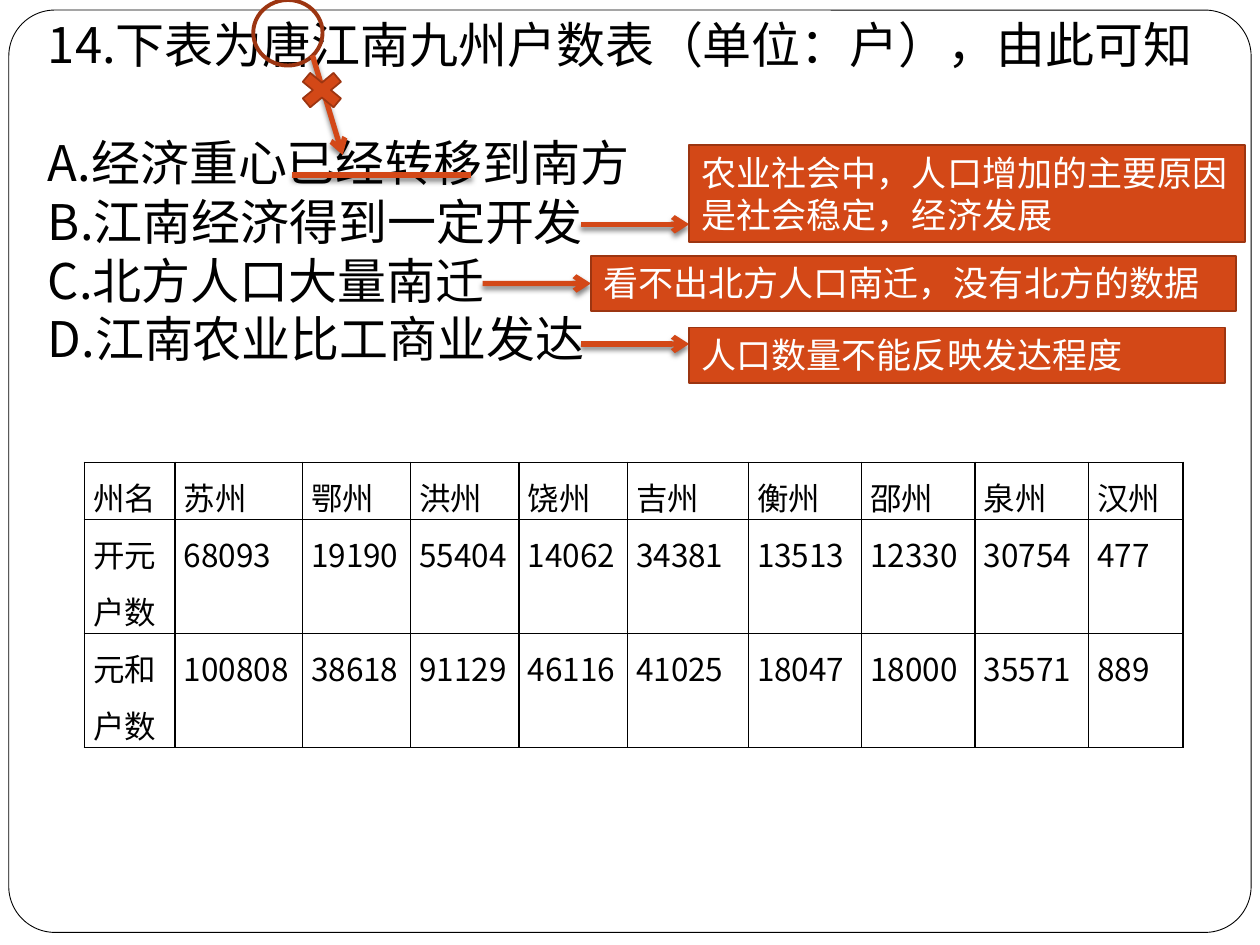
from lxml import etree
from pptx import Presentation, util as u
from pptx.dml.color import RGBColor
from pptx.enum import shapes, text
from pptx.oxml import ns, parse_xml

SANS, SERIF = "Noto Sans CJK SC", "Times New Roman"
BLACK, WHITE, ORANGE, RUST = "000000", "FFFFFF", "D34817", "9C3511"
LINE_PITCH = 1.2

question = "14.下表为唐江南九州户数表（单位：户），由此可知"
options = ["A.经济重心已经转移到南方", "B.江南经济得到一定开发",
           "C.北方人口大量南迁", "D.江南农业比工商业发达"]
callouts = [
    ("农业社会中，人口增加的主要原因是社会稳定，经济发展", (5.47, 1.15, 4.41, 0.77), 1.78),
    ("看不出北方人口南迁，没有北方的数据", (4.69, 2.03, 5.12, 0.44), 2.25),
    ("人口数量不能反映发达程度", (5.47, 2.6, 4.25, 0.44), 2.73),
]
households = [
    ["州名", "苏州", "鄂州", "洪州", "饶州", "吉州", "衡州", "邵州", "泉州", "汉州"],
    ["开元\n户数", "68093", "19190", "55404", "14062", "34381", "13513", "12330", "30754", "477"],
    ["元和\n户数", "100808", "38618", "91129", "46116", "41025", "18047", "18000", "35571", "889"],
]
column_widths = [0.72, 1.01, 0.86, 0.86, 0.86, 0.96, 0.9, 0.9, 0.9, 0.75]
row_heights = [0.45, 0.9, 0.9]


def color(value):
    return RGBColor.from_string(value)


def inches(values):
    return [u.Inches(v) for v in values]


def child(parent, tag, **attributes):
    return etree.SubElement(parent, ns.qn(tag), attributes)


def format_text(frame, size, ink, font=SANS, align=text.PP_ALIGN.LEFT, spacing=None):
    for paragraph in frame.paragraphs:
        paragraph.alignment = align
        paragraph.space_before = paragraph.space_after = u.Pt(0)
        paragraph.line_spacing = spacing or u.Pt(size * LINE_PITCH)
        for run in paragraph.runs:
            run.font.size = u.Pt(size)
            run.font.bold = False
            run.font.name = font
            run.font.color.rgb = color(ink)
            child(run._r.get_or_add_rPr(), "a:ea", typeface=SANS)


def fill_placeholder(placeholder, lines, top, height):
    placeholder.left, placeholder.top, placeholder.width, placeholder.height = inches(
        (0.28, top, 9.72, height))
    frame = placeholder.text_frame
    frame.text = "\n".join(lines)
    frame.word_wrap = True
    frame.auto_size = text.MSO_AUTO_SIZE.NONE
    frame.vertical_anchor = text.MSO_ANCHOR.MIDDLE
    frame.margin_top = frame.margin_bottom = 0
    format_text(frame, 28, BLACK)
    for paragraph in frame.paragraphs:
        properties = paragraph._p.get_or_add_pPr()
        properties.set("marL", "0")
        properties.set("indent", "0")
        child(properties, "a:buNone")


def add_shape(slide, kind, box, fill, outline, weight):
    shape = slide.shapes.add_shape(kind, *inches(box))
    shape.shadow.inherit = False
    if fill:
        shape.fill.solid()
        shape.fill.fore_color.rgb = color(fill)
    else:
        shape.fill.background()
    shape.line.color.rgb = color(outline)
    shape.line.width = u.Pt(weight)
    return shape


def add_stroke(slide, start, end, arrow=True):
    stroke = slide.shapes.add_connector(shapes.MSO_CONNECTOR.STRAIGHT, *inches(start + end))
    stroke.line.color.rgb = color(ORANGE)
    stroke.line.width = u.Pt(3)
    if arrow:
        child(stroke.line._get_or_add_ln(), "a:tailEnd", type="arrow")
    effects = child(stroke._element.spPr, "a:effectLst")
    shadow = child(effects, "a:outerShdw", blurRad=str(u.Pt(3)), dist=str(u.Pt(2)),
                   dir="5400000", rotWithShape="0")
    child(child(shadow, "a:srgbClr", val=BLACK), "a:alpha", val="50000")
    return stroke


def add_borders(cell):
    properties = cell._tc.get_or_add_tcPr()
    for position, side in enumerate("LRTB"):
        properties.insert(position, parse_xml(
            f'<a:ln{side} {ns.nsdecls("a")} w="{u.Pt(1)}"><a:solidFill>'
            f'<a:srgbClr val="{BLACK}"/></a:solidFill></a:ln{side}>'))


def add_household_table(slide):
    table = slide.shapes.add_table(
        len(households), len(column_widths),
        *inches((0.67, 3.67, sum(column_widths), sum(row_heights)))).table
    table.first_row = table.horz_banding = False
    for column, width in zip(table.columns, column_widths):
        column.width = u.Inches(width)
    for r, (row, values) in enumerate(zip(table.rows, households)):
        row.height = u.Inches(row_heights[r])
        for c, (cell, value) in enumerate(zip(row.cells, values)):
            cell.text_frame.text = value
            cell.margin_left = cell.margin_right = u.Inches(0.07)
            cell.margin_top = cell.margin_bottom = 0
            cell.fill.background()
            add_borders(cell)
            format_text(cell.text_frame, 18, BLACK, SANS if r and c else SERIF,
                        text.PP_ALIGN.JUSTIFY, 1.25)


def main():
    deck = Presentation()
    deck.slide_width, deck.slide_height = inches((10, 7.5))
    slide = deck.slides.add_slide(deck.slide_layouts[1])
    kinds = shapes.MSO_SHAPE

    frame = add_shape(slide, kinds.ROUNDED_RECTANGLE, (0.07, 0.08, 9.86, 7.32), WHITE, BLACK, 0.5)
    frame.adjustments[0] = 0.05
    slide.shapes._spTree.insert(2, frame._element)

    fill_placeholder(slide.shapes.title, [question], 0.11, 0.47)
    fill_placeholder(slide.placeholders[1], options, 1.05, 1.87)
    add_household_table(slide)

    add_shape(slide, kinds.OVAL, (2.01, 0, 0.55, 0.52), None, RUST, 2.25)
    add_stroke(slide, (2.32, 1.39), (3.74, 1.39), arrow=False)
    add_stroke(slide, (2.48, 0.44), (2.72, 1.23))
    add_shape(slide, kinds.MATH_MULTIPLY, (2.32, 0.52, 0.47, 0.39), ORANGE, RUST, 1)

    for remark, box, arrow_y in callouts:
        left, top, _, height = box
        arrow = add_stroke(slide, (left - 0.86, arrow_y), (left, arrow_y))
        callout = add_shape(slide, kinds.RECTANGLE, box, ORANGE, RUST, 1)
        callout.text_frame.text = remark
        callout.text_frame.word_wrap = True
        callout.text_frame.vertical_anchor = text.MSO_ANCHOR.TOP
        format_text(callout.text_frame, 20, WHITE)
        if abs(top + height / 2 - arrow_y) < 0.01:
            arrow.end_connect(callout, 1)

    deck.save("out.pptx")


if __name__ == "__main__":
    main()
